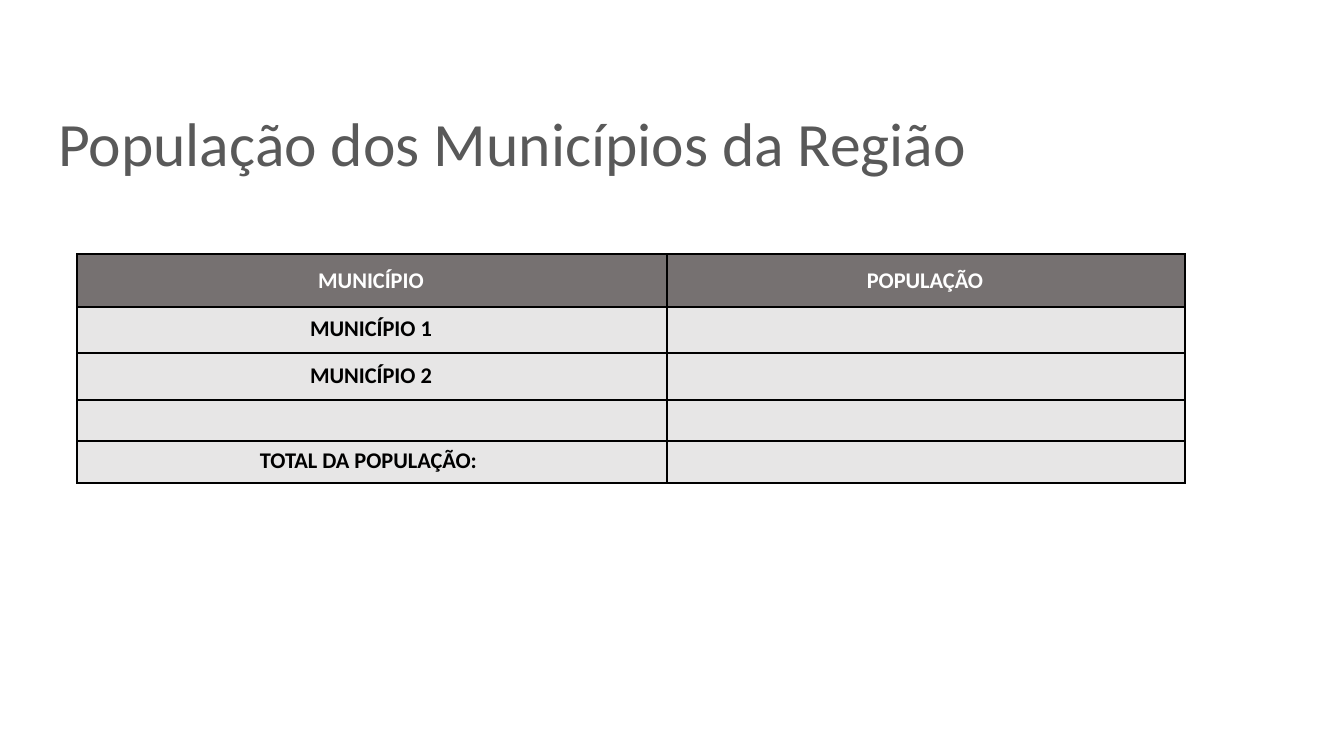
from lxml import etree
from pptx import Presentation
from pptx import util as u
from pptx.dml.color import RGBColor
from pptx.enum import text
from pptx.oxml import ns

PX_PER_INCH = 100.8
COLOURS = {
    "title": "595959",
    "header": "767171",
    "body": "E7E6E6",
    "border": "000000",
    "header_text": "FFFFFF",
    "body_text": "000000",
}


def px(length):
    return u.Emu(round(length * u.Inches(1) / PX_PER_INCH))


def write(frame, wording, *, size, colour, bold=False, font="Calibri",
          align=text.PP_ALIGN.LEFT, spacing=1.0):
    paragraph = frame.paragraphs[0]
    paragraph.alignment = align
    paragraph.line_spacing = spacing
    paragraph.font.size = u.Pt(size)
    if wording:
        run = paragraph.add_run()
        run.text = wording
        run.font.name = font
        run.font.size = u.Pt(size)
        run.font.bold = bold
        run.font.color.rgb = RGBColor.from_string(COLOURS[colour])


class PopulationSlide:
    def __init__(self, deck):
        self.slide = deck.slides.add_slide(deck.slide_layouts[5])

    def title(self, wording, left, top, width, height):
        heading = self.slide.shapes.title
        heading.left, heading.top = px(left), px(top)
        heading.width, heading.height = px(width), px(height)
        frame = heading.text_frame
        frame.word_wrap = True
        frame.auto_size = text.MSO_AUTO_SIZE.NONE
        frame.vertical_anchor = text.MSO_ANCHOR.TOP
        write(frame, wording, size=44, colour="title", spacing=0.9)

    def border(self, cell):
        properties = cell._tc.get_or_add_tcPr()
        for side in "LRTB":
            line = etree.SubElement(properties, ns.qn(f"a:ln{side}"), w=str(u.Pt(1)))
            fill = etree.SubElement(line, ns.qn("a:solidFill"))
            etree.SubElement(fill, ns.qn("a:srgbClr"), val=COLOURS["border"])

    def cell(self, cell, wording, part):
        self.border(cell)
        cell.fill.solid()
        cell.fill.fore_color.rgb = RGBColor.from_string(COLOURS[part])
        cell.vertical_anchor = text.MSO_ANCHOR.MIDDLE
        cell.margin_left = 0
        cell.margin_top = px(2 if part == "header" else 0)
        cell.margin_right = cell.margin_bottom = px(2)
        write(cell.text_frame, wording, size=16, bold=True,
              colour=f"{part}_text", align=text.PP_ALIGN.CENTER)

    def table(self, rows, left, top, widths, heights):
        grid = self.slide.shapes.add_table(
            len(rows), len(widths), px(left), px(top),
            px(sum(widths)), px(sum(heights))).table
        for column, width in zip(grid.columns, widths):
            column.width = px(width)
        for index, (row, height) in enumerate(zip(rows, heights)):
            grid.rows[index].height = px(height)
            for column, wording in enumerate(row):
                self.cell(grid.cell(index, column), wording,
                          "body" if index else "header")


def main():
    deck = Presentation()
    deck.slide_width, deck.slide_height = px(1344), px(756)
    population = PopulationSlide(deck)
    population.title("População dos Municípios da Região", 48, 108, 1108, 146)
    population.table(
        [
            ("MUNICÍPIO", "POPULAÇÃO"),
            ("MUNICÍPIO 1", ""),
            ("MUNICÍPIO 2", ""),
            ("", ""),
            ("TOTAL DA POPULAÇÃO: ", ""),
        ],
        77, 254, widths=[590, 518], heights=[53, 46, 47, 41, 42])
    deck.save("out.pptx")


if __name__ == "__main__":
    main()
